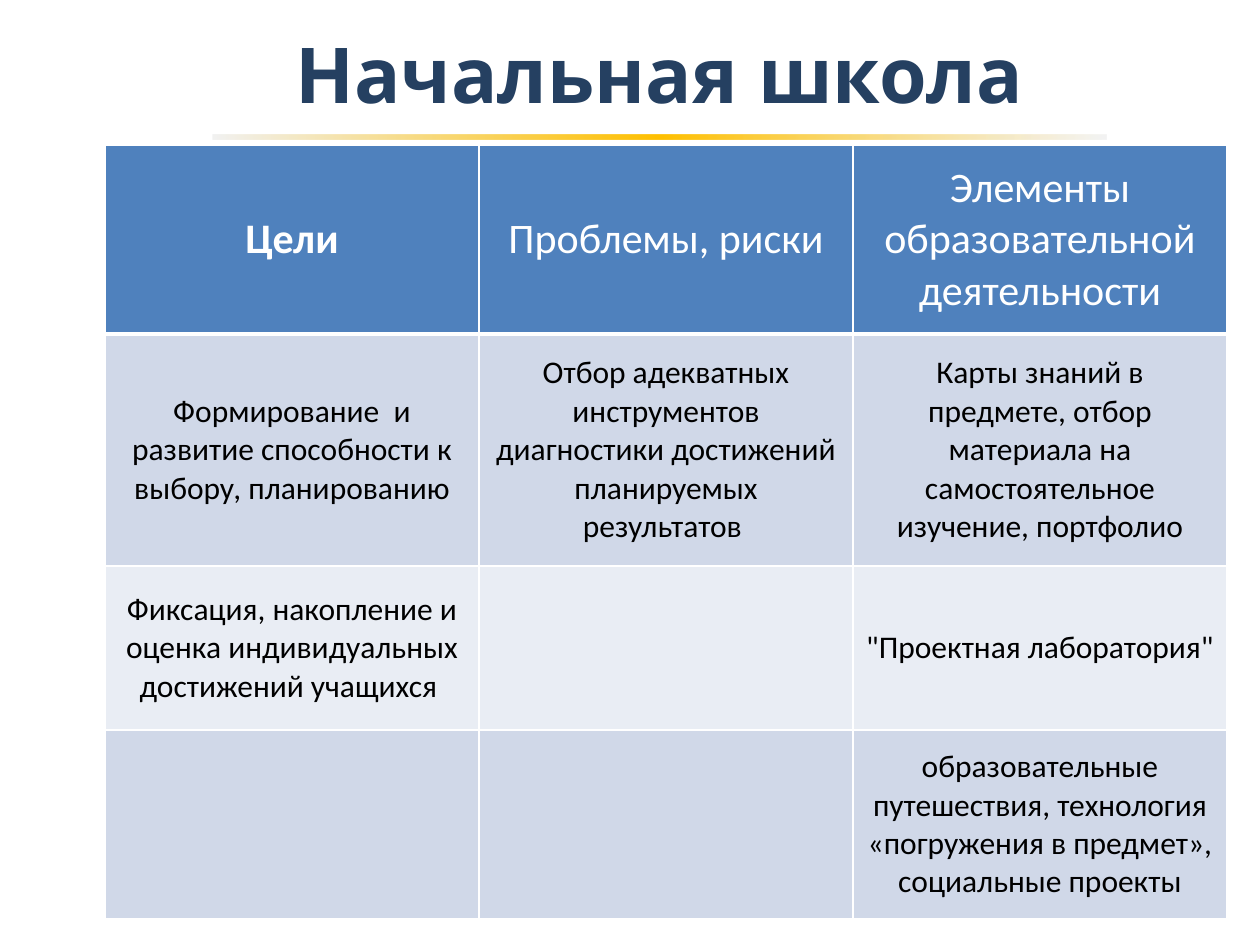
from pptx import Presentation
from pptx.dml.color import RGBColor as Rgb
from pptx.enum.shapes import MSO_SHAPE as Kind
from pptx.enum.text import MSO_ANCHOR as Anchor, PP_ALIGN as Align
from pptx.oxml import parse_xml
from pptx.util import Pt

PX = 914400 / 126
NS = 'xmlns:a="http://schemas.openxmlformats.org/drawingml/2006/main"'
HUES = {"navy": "254061", "blue": "4F81BD", "mid": "D0D8E8", "pale": "E9EDF4",
        "white": "FFFFFF", "black": "000000", "gold": "FFC000", "grey": "F2F2F2"}


def px(*nums):
    return [round(n * PX) for n in nums]


def write(frame, text, face, size, hue, bold):
    para = frame.paragraphs[0]
    para.alignment = Align.CENTER
    run = para.add_run()
    run.text = text
    font = run.font
    font.name, font.size, font.bold = face, Pt(size), bold
    font.color.rgb = Rgb.from_string(HUES[hue])


deck = Presentation()
deck.slide_width, deck.slide_height = px(1260, 945)
slide = deck.slides.add_slide(deck.slide_layouts[5])

title = slide.shapes.title
title.left, title.top, title.width, title.height = px(98, 20, 1123, 168)
title.text_frame.vertical_anchor = Anchor.TOP
write(title.text_frame, "Начальная школа", "League Spartan", 44, "navy", True)

rows = [
    ["Цели", "Проблемы, риски", "Элементы образовательной деятельности"],
    ["Формирование  и развитие способности к выбору, планированию",
     "Отбор адекватных инструментов диагностики достижений планируемых результатов ",
     "Карты знаний в предмете, отбор материала на самостоятельное изучение, портфолио"],
    ["Фиксация, накопление и оценка индивидуальных достижений учащихся ", "",
     "\"Проектная лаборатория\""],
    ["", "", "образовательные путешествия, технология «погружения в предмет», социальные проекты"],
]
highs = px(189, 232, 164, 189)
fills = ["blue", "mid", "pale", "mid"]

grid = slide.shapes.add_table(4, 3, *px(105, 145, 1122, 774)).table
for col in grid.columns:
    col.width = px(374)[0]
for r, texts in enumerate(rows):
    grid.rows[r].height = highs[r]
    head = r == 0
    for c, text in enumerate(texts):
        cell = grid.cell(r, c)
        cell.vertical_anchor = Anchor.MIDDLE
        props = cell._tc.get_or_add_tcPr()
        for side in "LRTB":
            wide = Pt(3 if head and side == "B" else 1)
            props.append(parse_xml(
                f'<a:ln{side} {NS} w="{wide}"><a:solidFill>'
                f'<a:srgbClr val="{HUES["white"]}"/></a:solidFill></a:ln{side}>'))
        cell.fill.solid()
        cell.fill.fore_color.rgb = Rgb.from_string(HUES[fills[r]])
        if text:
            write(cell.text_frame, text, "Calibri", 24 if head else 18,
                  "white" if head else "black", head and c == 0)

rule = slide.shapes.add_shape(Kind.RECTANGLE, *px(213, 135, 893, 5))
rule.shadow.inherit = False
rule.line.fill.background()
rule.fill.gradient()
rule.fill.gradient_angle = 0
stops = rule._element.spPr.find(".//{*}gsLst")
for stop in list(stops):
    stops.remove(stop)
for pos, hue, alpha in [(0, "grey", 100), (50, "gold", 100), (100, "grey", 80)]:
    stops.append(parse_xml(
        f'<a:gs {NS} pos="{pos * 1000}"><a:srgbClr val="{HUES[hue]}">'
        f'<a:alpha val="{alpha * 1000}"/></a:srgbClr></a:gs>'))

deck.save("out.pptx")
